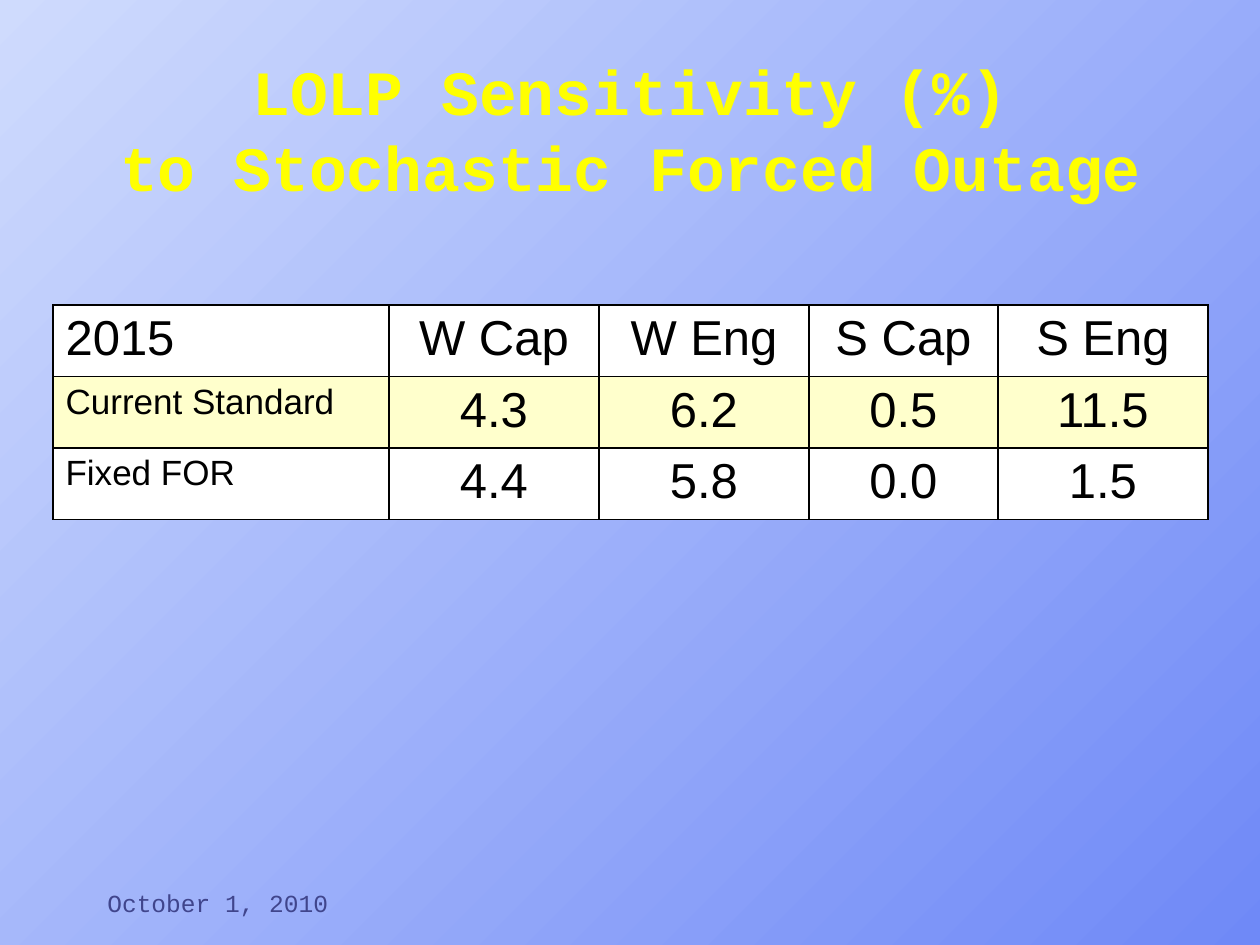
from lxml import etree
from pptx import Presentation
from pptx import util as u
from pptx.dml import color
from pptx.enum import text
from pptx.oxml import ns

SCALE = 914400 / 126
HEADER = ["2015", "W Cap", "W Eng", "S Cap", "S Eng"]
ROWS = [
    ["Current Standard", "4.3", "6.2", "0.5", "11.5"],
    ["Fixed FOR", "4.4", "5.8", "0.0", "1.5"],
]
COLUMN_WIDTHS = [336, 210, 210, 189, 210]
ROW_FILLS = ["FFFFFF", "FFFFCC", "FFFFFF"]


def px(length):
    return u.Emu(round(length * SCALE))


def rgb(value):
    return color.RGBColor.from_string(value)


def style_text(frame, size, font, ink, align, bold=False):
    for para in frame.paragraphs:
        para.alignment = align
        for span in para.runs:
            span.font.size = u.Pt(size)
            span.font.name = font
            span.font.bold = bold
            span.font.color.rgb = rgb(ink)


def paint_background(page):
    fill = page.background.fill
    fill.gradient()
    fill.gradient_angle = 315
    for stop, shade in zip(fill.gradient_stops, ["CFDBFD", "6F89F7"]):
        stop.color.rgb = rgb(shade)


def add_text(page, box, words, size, ink, align, bold=False):
    frame = page.shapes.add_textbox(*map(px, box)).text_frame
    frame.word_wrap = True
    frame.vertical_anchor = text.MSO_ANCHOR.BOTTOM
    frame.text = words
    style_text(frame, size, "Courier New", ink, align, bold)


def add_borders(cell, ink):
    properties = cell._tc.get_or_add_tcPr()
    for position, side in enumerate(["lnL", "lnR", "lnT", "lnB"]):
        line = etree.Element(ns.qn(f"a:{side}"), w=str(u.Pt(1)))
        fill = etree.SubElement(line, ns.qn("a:solidFill"))
        etree.SubElement(fill, ns.qn("a:srgbClr"), val=ink)
        properties.insert(position, line)


def add_sensitivity_table(page, box):
    rows = [HEADER] + ROWS
    frame = page.shapes.add_table(len(rows), len(HEADER), *map(px, box))
    table = frame.table
    table.first_row = False
    table.horz_banding = False
    for column, width in zip(table.columns, COLUMN_WIDTHS):
        column.width = px(width)
    for row_index, (values, shade) in enumerate(zip(rows, ROW_FILLS)):
        for column_index, value in enumerate(values):
            cell = table.cell(row_index, column_index)
            cell.text = value
            cell.fill.solid()
            cell.fill.fore_color.rgb = rgb(shade)
            is_label = column_index == 0
            size = 20 if is_label and row_index else 28
            align = text.PP_ALIGN.LEFT if is_label else text.PP_ALIGN.CENTER
            style_text(cell.text_frame, size, "Arial", "000000", align)
            add_borders(cell, "000000")


def main():
    deck = Presentation()
    deck.slide_width, deck.slide_height = px(1260), px(945)
    page = deck.slides.add_slide(deck.slide_layouts[6])
    paint_background(page)
    add_text(page, (95, 42, 1071, 168),
             "LOLP Sensitivity (%)\vto Stochastic Forced Outage",
             36, "FFFF00", text.PP_ALIGN.CENTER, bold=True)
    add_sensitivity_table(page, (53, 305, sum(COLUMN_WIDTHS), 201))
    add_text(page, (95, 861, 262, 63), "October 1, 2010",
             14, "40458C", text.PP_ALIGN.LEFT)
    deck.save("out.pptx")


if __name__ == "__main__":
    main()
